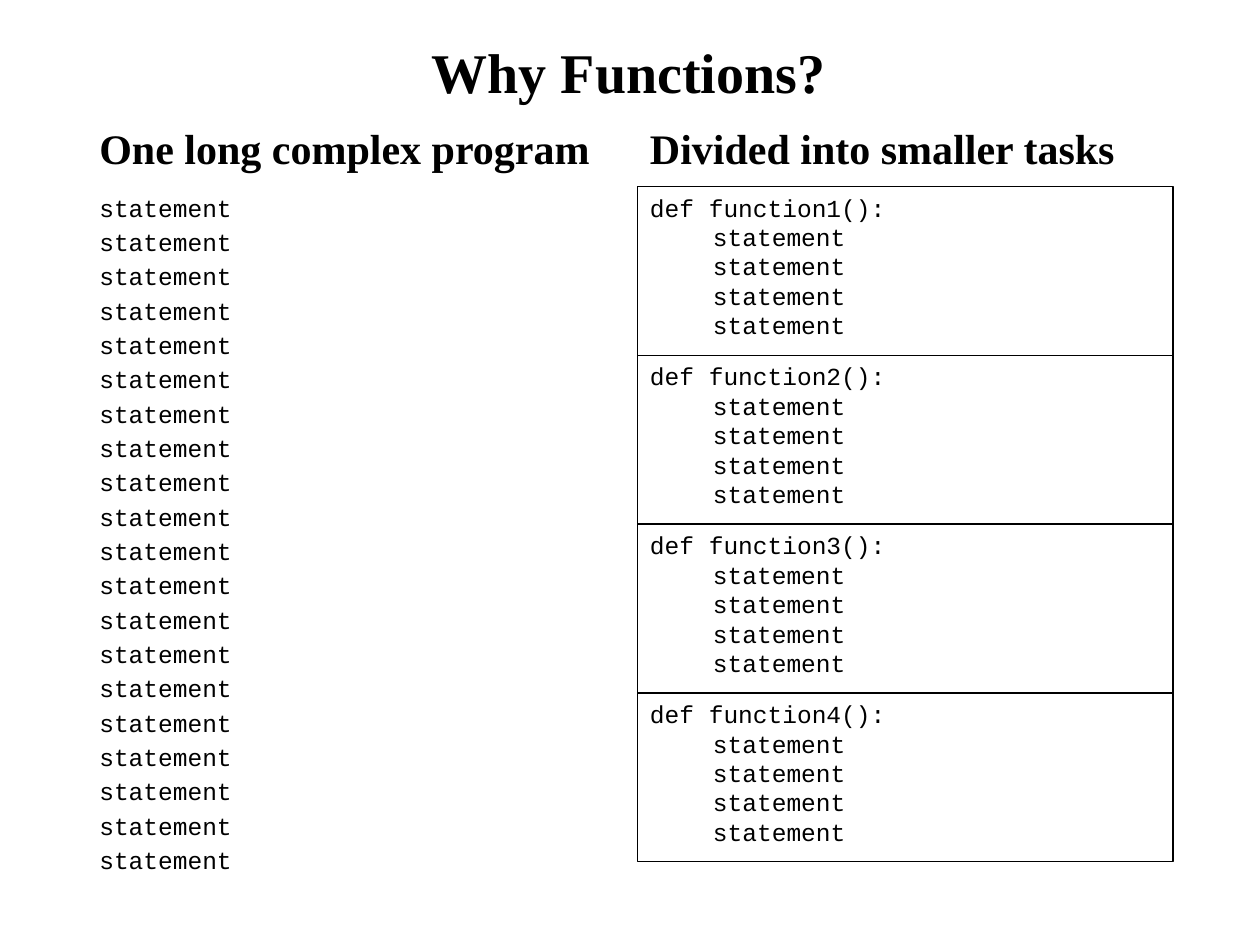
"""Build a slide contrasting one long program with a program split into functions."""
from pptx import Presentation
from pptx.dml.color import RGBColor
from pptx.enum.shapes import MSO_SHAPE
from pptx.enum.text import MSO_ANCHOR as Anchor, PP_ALIGN as Align
from pptx.util import Inches, Pt

BLACK = RGBColor(0, 0, 0)
HEADING_FONT = "Times New Roman"
CODE_FONT = "Courier New"

TITLE = "Why Functions?"
HEADINGS = [
    ("One long complex program", 0.69, 4.23),
    ("Divided into smaller tasks", 5.06, 4.25),
]
LONG_PROGRAM = ["statement"] * 20
FUNCTIONS = [
    [f"def function{number}():"] + ["\tstatement"] * 4 for number in range(1, 5)
]

HEADING_TOP, HEADING_HEIGHT = 0.52, 0.9
CODE_TOP, PROGRAM_HEIGHT, FUNCTION_HEIGHT = 1.48, 5.68, 1.34


def write(shape, lines, font, size, bold=False, anchor=Anchor.TOP,
          align=Align.LEFT, gap=0):
    frame = shape.text_frame
    frame.word_wrap = True
    frame.vertical_anchor = anchor
    frame.text = "\n".join(lines)
    for index, paragraph in enumerate(frame.paragraphs):
        paragraph.alignment = align
        paragraph.space_before = Pt(gap if index else 0)
        for run in paragraph.runs:
            run.font.name = font
            run.font.size = Pt(size)
            run.font.bold = bold
            run.font.color.rgb = BLACK


def add_text(slide, box, lines, font, size, **style):
    write(slide.shapes.add_textbox(*map(Inches, box)), lines, font, size, **style)


def add_function(slide, box, lines):
    function = slide.shapes.add_shape(MSO_SHAPE.RECTANGLE, *map(Inches, box))
    function.shadow.inherit = False
    function.fill.background()
    function.line.color.rgb = BLACK
    function.line.width = Pt(0.75)
    write(function, lines, CODE_FONT, 14)


def main():
    presentation = Presentation()
    presentation.slide_width = Inches(10)
    presentation.slide_height = Inches(7.5)
    slide = presentation.slides.add_slide(presentation.slide_layouts[6])

    for heading, left, width in HEADINGS:
        add_text(slide, (left, HEADING_TOP, width, HEADING_HEIGHT), [heading],
                 HEADING_FONT, 24, bold=True, anchor=Anchor.BOTTOM)

    (_, program_left, program_width), (_, tasks_left, tasks_width) = HEADINGS
    add_text(slide, (program_left, CODE_TOP, program_width, PROGRAM_HEIGHT),
             LONG_PROGRAM, CODE_FONT, 14, gap=2.8)
    for row, lines in enumerate(FUNCTIONS):
        top = CODE_TOP + row * FUNCTION_HEIGHT
        add_function(slide, (tasks_left, top, tasks_width, FUNCTION_HEIGHT), lines)

    add_text(slide, (0.74, 0.06, 8.5, 1.01), [TITLE], HEADING_FONT, 32,
             bold=True, anchor=Anchor.MIDDLE, align=Align.CENTER)
    presentation.save("out.pptx")


if __name__ == "__main__":
    main()
